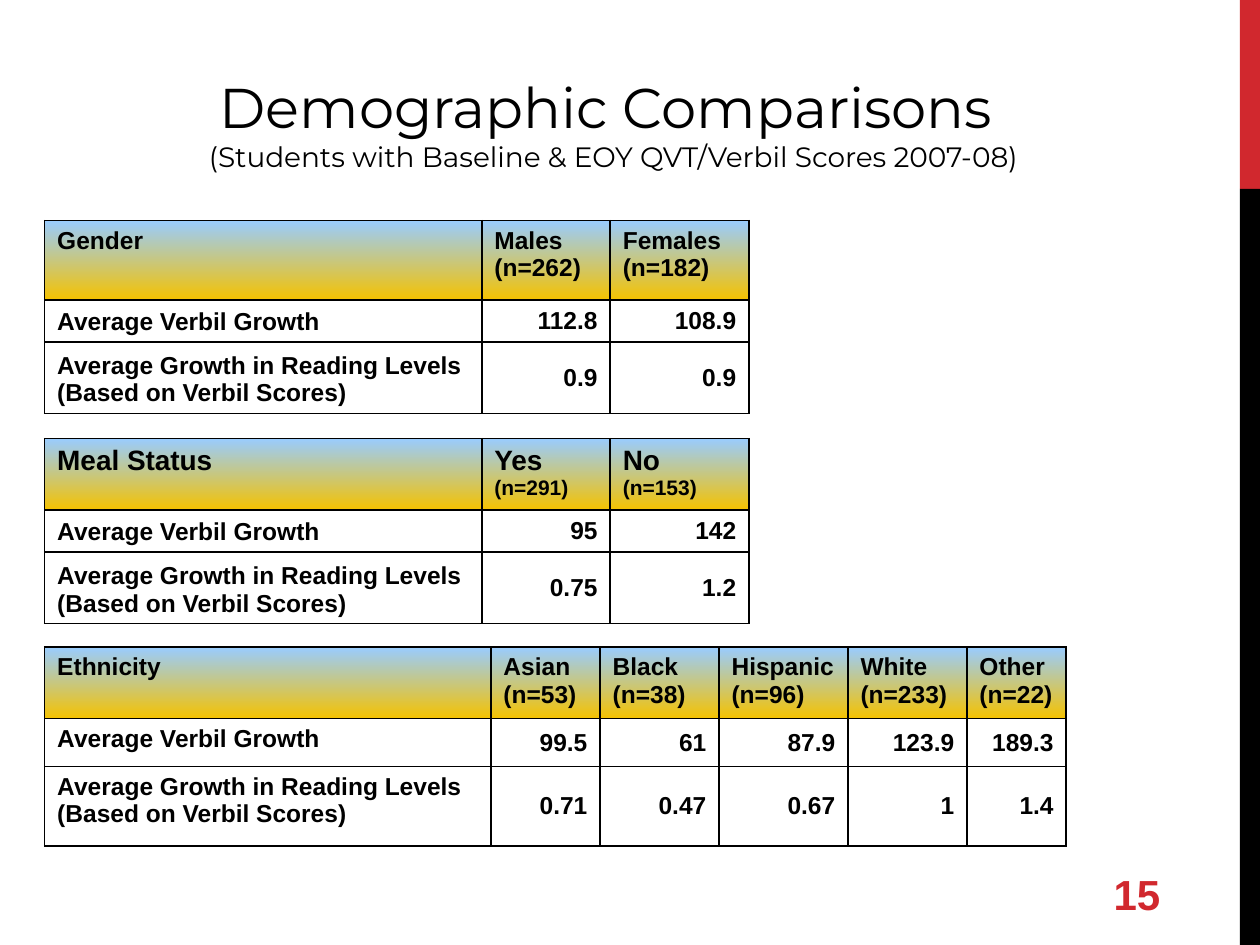
from dataclasses import dataclass

from lxml.etree import SubElement
from pptx import Presentation
from pptx.dml.color import RGBColor
from pptx.enum.shapes import MSO_SHAPE
from pptx.enum.text import MSO_ANCHOR as Anchor, MSO_AUTO_SIZE as AutoSize, PP_ALIGN as Align
from pptx.oxml.ns import qn
from pptx.util import Pt


@dataclass(frozen=True)
class Theme:
    heading_font: str = "Montserrat"
    body_font: str = "Arial"
    ink: str = "000000"
    accent: str = "D1282E"
    header_top: str = "99CCFF"
    header_bottom: str = "F5C201"
    title: int = 32
    subtitle: int = 16
    page: int = 24
    large: int = 16
    body: int = 14
    small: int = 12
    border: int = 1


THEME = Theme()
SLIDE_WIDTH, SLIDE_HEIGHT = 720, 540

# A text is a list of paragraphs; a paragraph is a list of (wording, size) runs.
TITLE = [
    [("Demographic Comparisons ", THEME.title)],
    [("(Students with Baseline & EOY QVT/Verbil Scores 2007-08)", THEME.subtitle)],
]
PAGE_NUMBER = "15"
GROWTH = "Average Verbil Growth"
LEVELS = "Average Growth in Reading Levels"
BASIS = "(Based on Verbil Scores)"

TABLE_LEFT = 25.5
TABLES = [
    {
        "top": 126, "columns": [249.8, 73.4, 79.2], "rows": [45.4, 23.8, 40.6],
        "label_anchor": Anchor.BOTTOM,
        "header": ["Gender", "Males\n(n=262)", "Females (n=182)"],
        "body": [
            [GROWTH, "112.8", "108.9"],
            [f"{LEVELS}\n{BASIS}", "0.9", "0.9"],
        ],
    },
    {
        "top": 250.6, "columns": [249.8, 73.4, 79.2], "rows": [40.7, 24, 40.9],
        "label_anchor": Anchor.BOTTOM,
        "header": [
            [[("Meal Status", THEME.large)]],
            [[("Yes ", THEME.large), ("(n=291)", THEME.small)]],
            [[("No ", THEME.large), ("(n=153)", THEME.small)]],
        ],
        "body": [
            [GROWTH, "95", "142"],
            [f"{LEVELS} {BASIS}", "0.75", "1.2"],
        ],
    },
    {
        "top": 369.8, "columns": [255, 62.4, 68, 73.7, 68, 56.8], "rows": [40.3, 27.4, 45.4],
        "label_anchor": Anchor.TOP,
        "header": ["Ethnicity", "Asian (n=53)", "Black (n=38)", "Hispanic (n=96)",
                   "White (n=233)", "Other (n=22)"],
        "body": [
            [GROWTH, "99.5", "61", "87.9", "123.9", "189.3"],
            [f"{LEVELS} {BASIS}", "0.71", "0.47", "0.67", "1", "1.4"],
        ],
    },
]


def rgb(color):
    return RGBColor.from_string(color)


def write(frame, text, size=THEME.body, font=THEME.body_font, color=THEME.ink,
          bold=True, align=Align.LEFT):
    """Fill a text frame with a plain string or with paragraphs of sized runs."""
    if isinstance(text, str):
        text = [[(line, size)] for line in text.split("\n")]
    for index, runs in enumerate(text):
        paragraph = frame.add_paragraph() if index else frame.paragraphs[0]
        paragraph.alignment = align
        paragraph.space_before = Pt(0)
        for wording, run_size in runs:
            run = paragraph.add_run()
            run.text = wording
            run.font.name = font
            run.font.size = Pt(run_size)
            run.font.bold = bold
            run.font.color.rgb = rgb(color)


def add_bar(slide, top, height, color):
    left = 708.5
    bar = slide.shapes.add_shape(MSO_SHAPE.RECTANGLE, Pt(left), Pt(top),
                                 Pt(SLIDE_WIDTH - left), Pt(height))
    bar.shadow.inherit = False
    bar.fill.solid()
    bar.fill.fore_color.rgb = rgb(color)
    bar.line.fill.background()


def add_borders(cell):
    """Line all four sides; must run before the fill is set."""
    properties = cell._tc.get_or_add_tcPr()
    for side in ("a:lnL", "a:lnR", "a:lnT", "a:lnB"):
        line = SubElement(properties, qn(side), w=str(Pt(THEME.border)))
        SubElement(SubElement(line, qn("a:solidFill")), qn("a:srgbClr"), val=THEME.ink)


def fill_header(cell):
    cell.fill.gradient()
    cell.fill.gradient_angle = 270
    for stop, color in zip(cell.fill.gradient_stops, (THEME.header_top, THEME.header_bottom)):
        stop.color.rgb = rgb(color)


def add_comparison(slide, content):
    columns, rows = content["columns"], content["rows"]
    table = slide.shapes.add_table(len(rows), len(columns), Pt(TABLE_LEFT), Pt(content["top"]),
                                   Pt(sum(columns)), Pt(sum(rows))).table
    table.first_row = table.horz_banding = False
    for column, width in zip(table.columns, columns):
        column.width = Pt(width)
    for row, height in zip(table.rows, rows):
        row.height = Pt(height)

    for r, texts in enumerate([content["header"], *content["body"]]):
        for c, text in enumerate(texts):
            cell = table.cell(r, c)
            add_borders(cell)
            is_value = r > 0 and c > 0
            write(cell.text_frame, text, align=Align.RIGHT if is_value else Align.LEFT)
            if r == 0:
                fill_header(cell)
                cell.vertical_anchor = Anchor.TOP
            else:
                cell.fill.background()
                cell.vertical_anchor = Anchor.MIDDLE if is_value else content["label_anchor"]


def main():
    deck = Presentation()
    deck.slide_width, deck.slide_height = Pt(SLIDE_WIDTH), Pt(SLIDE_HEIGHT)
    slide = deck.slides.add_slide(deck.slide_layouts[5])

    accent_height = 108
    add_bar(slide, 0, accent_height, THEME.accent)
    add_bar(slide, accent_height, SLIDE_HEIGHT - accent_height, THEME.ink)

    page = slide.shapes.add_textbox(Pt(629.3), Pt(491.8), Pt(54.7), Pt(37.4)).text_frame
    page.word_wrap = True
    page.vertical_anchor = Anchor.MIDDLE
    write(page, PAGE_NUMBER, size=THEME.page, color=THEME.accent)

    title = slide.shapes.title
    title.left, title.top, title.width, title.height = Pt(72), Pt(37.7), Pt(557.3), Pt(65.5)
    title.text_frame.vertical_anchor = Anchor.TOP
    title.text_frame.auto_size = AutoSize.SHAPE_TO_FIT_TEXT
    write(title.text_frame, TITLE, font=THEME.heading_font, bold=False, align=Align.CENTER)

    for content in TABLES:
        add_comparison(slide, content)
    deck.save("out.pptx")


if __name__ == "__main__":
    main()
